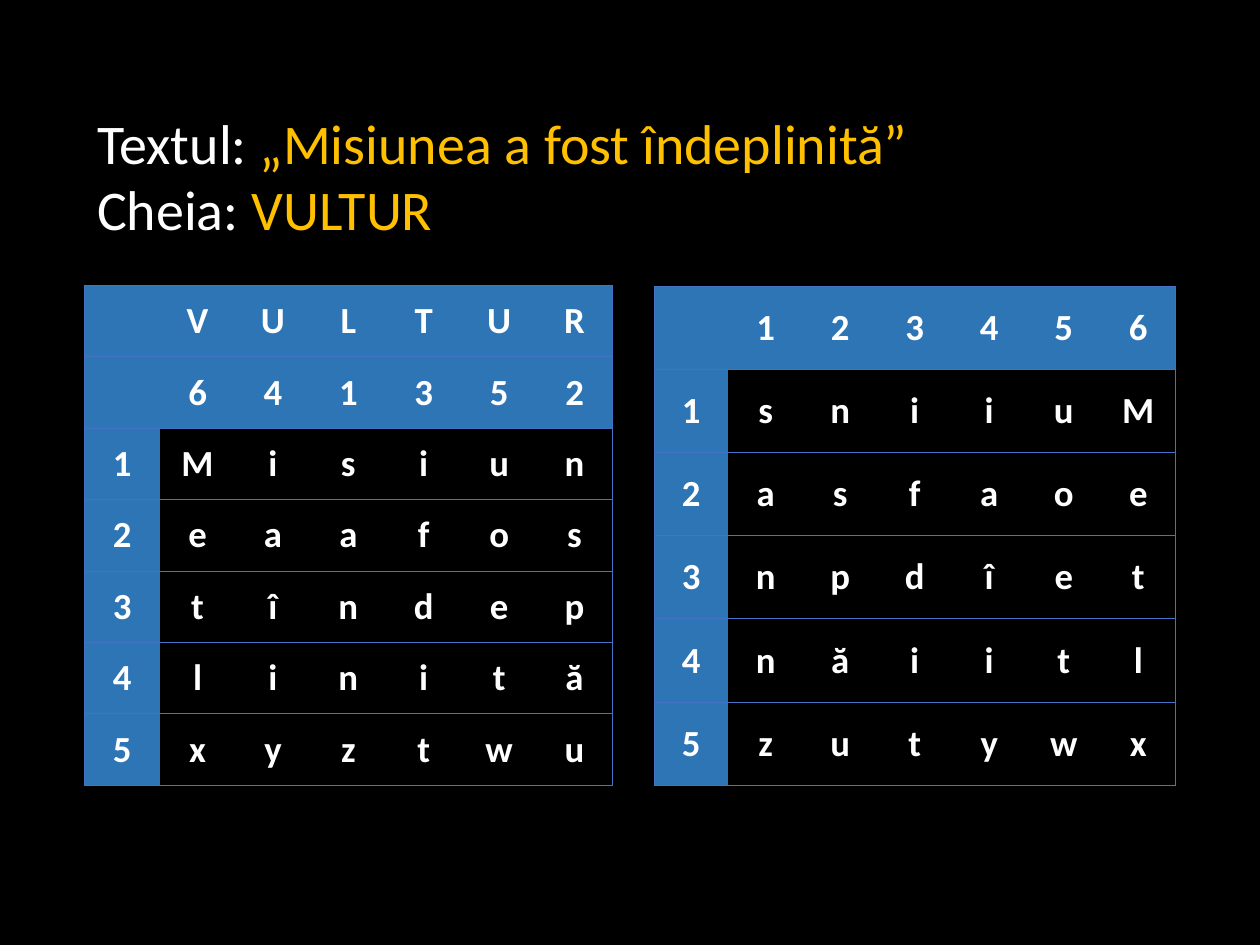
from lxml import etree
from pptx import Presentation
from pptx.dml.color import RGBColor
from pptx.enum.text import MSO_ANCHOR, PP_ALIGN
from pptx.oxml.ns import qn
from pptx.util import Inches, Pt

WHITE = RGBColor(0xFF, 0xFF, 0xFF)
BLACK = RGBColor(0x00, 0x00, 0x00)
GOLD = RGBColor(0xFF, 0xC0, 0x00)
HEADER_BLUE = RGBColor(0x2E, 0x75, 0xB6)
BORDER_BLUE = RGBColor(0x44, 0x72, 0xC4)
MIDDLE, TOP = MSO_ANCHOR.MIDDLE, MSO_ANCHOR.TOP
LEFT, CENTER = PP_ALIGN.LEFT, PP_ALIGN.CENTER
FONT = "Calibri"
TITLE_ONLY = 5

SLIDE_WIDTH, SLIDE_HEIGHT = Inches(10), Inches(7.5)
HEADING_LINES = [("Textul: ", "„Misiunea a fost îndeplinită”"), ("Cheia: ", "VULTUR")]
KEYED_ROWS = [" VULTUR", " 641352", "1Misiun", "2eaafos", "3tîndep", "4linită", "5xyztwu"]
SORTED_ROWS = [" 123456", "1sniiuM", "2asfaoe", "3npdîet", "4năiitl", "5zutywx"]


def share_box(left, top, width, height):
    """Turn shares of the slide's size into a box of lengths."""
    return (int(SLIDE_WIDTH * left), int(SLIDE_HEIGHT * top),
            int(SLIDE_WIDTH * width), int(SLIDE_HEIGHT * height))


def place_heading(slide, box):
    """Put the plain text and the key in the title placeholder."""
    title = slide.shapes.title
    title.left, title.top, title.width, title.height = box
    frame = title.text_frame
    frame.word_wrap = True
    frame.vertical_anchor = TOP
    frame.margin_top = Inches(0.12)
    for index, (label, value) in enumerate(HEADING_LINES):
        paragraph = frame.add_paragraph() if index else frame.paragraphs[0]
        paragraph.alignment = LEFT
        paragraph.line_spacing = 0.9
        paragraph.space_before = Pt(3 if index else 0)
        paragraph.font.name = FONT
        paragraph.font.size = Pt(32)
        for text, color in ((label, WHITE), (value, GOLD)):
            run = paragraph.add_run()
            run.text = text
            run.font.color.rgb = color


def set_borders(cell, visible_sides):
    """Draw thin lines on the visible sides and clear the others."""
    properties = cell._tc.get_or_add_tcPr()
    for side in "LRTB":
        line = etree.SubElement(properties, qn(f"a:ln{side}"), w=str(Pt(0.5)))
        if side in visible_sides:
            fill = etree.SubElement(line, qn("a:solidFill"))
            etree.SubElement(fill, qn("a:srgbClr"), val=str(BORDER_BLUE))
        else:
            etree.SubElement(line, qn("a:noFill"))


def format_cell(cell, letter, is_header, visible_sides):
    """Write one letter in a cell and set its fill and borders."""
    cell.margin_left = cell.margin_right = Inches(0.07)
    cell.margin_top = cell.margin_bottom = Inches(0.04)
    cell.vertical_anchor = MIDDLE
    set_borders(cell, visible_sides)
    if is_header:
        cell.fill.solid()
        cell.fill.fore_color.rgb = HEADER_BLUE
    else:
        cell.fill.background()
    cell.text = letter.strip()
    paragraph = cell.text_frame.paragraphs[0]
    paragraph.alignment = CENTER
    paragraph.font.name = FONT
    paragraph.font.size = Pt(21)
    paragraph.font.bold = True
    paragraph.font.color.rgb = WHITE


def place_cipher_table(slide, box, rows, header_rows):
    """Lay out a letter grid with equal columns and rows in the box."""
    last_column = len(rows[0]) - 1
    table = slide.shapes.add_table(len(rows), len(rows[0]), *box).table
    table.first_col = True
    table.horz_banding = False
    for row_index, letters in enumerate(rows):
        for column_index, letter in enumerate(letters):
            sides = "TB" + "L" * (column_index == 0) + "R" * (column_index == last_column)
            is_header = row_index < header_rows or column_index == 0
            format_cell(table.cell(row_index, column_index), letter, is_header, sides)


def build_cipher_slide(presentation):
    """Build the slide with the heading and both transposition tables."""
    slide = presentation.slides.add_slide(presentation.slide_layouts[TITLE_ONLY])
    slide.background.fill.solid()
    slide.background.fill.fore_color.rgb = BLACK
    place_heading(slide, share_box(0.067, 0.107, 0.831, 0.18))
    place_cipher_table(slide, share_box(0.067, 0.302, 0.419, 0.529), KEYED_ROWS, 2)
    place_cipher_table(slide, share_box(0.519, 0.303, 0.414, 0.528), SORTED_ROWS, 1)


def main():
    """Create the presentation and save it."""
    presentation = Presentation()
    presentation.slide_width, presentation.slide_height = SLIDE_WIDTH, SLIDE_HEIGHT
    build_cipher_slide(presentation)
    presentation.save("out.pptx")


if __name__ == "__main__":
    main()
